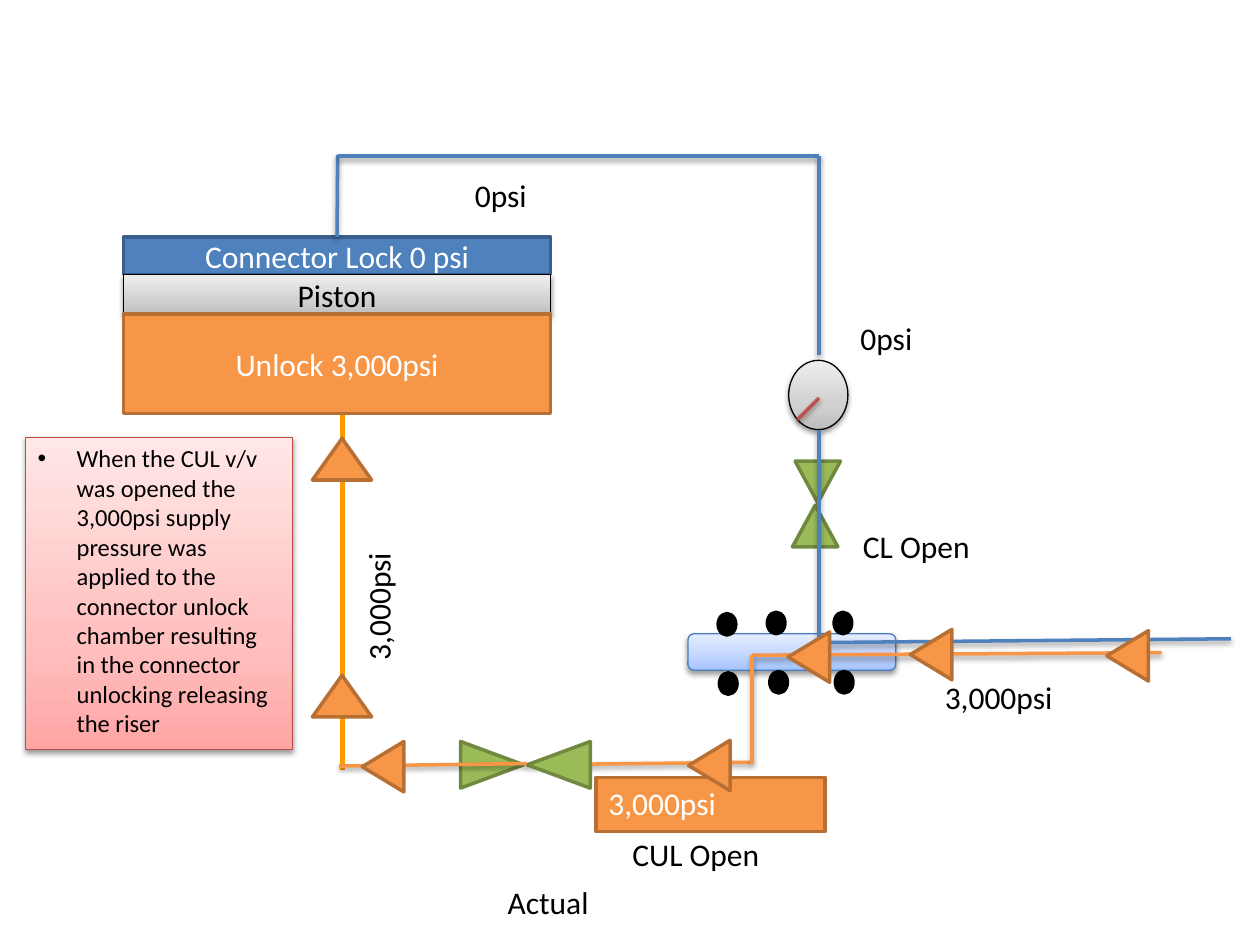
from copy import deepcopy
from pptx import Presentation, util as u
from pptx.dml.color import RGBColor
from pptx.enum import shapes, text
from pptx.oxml import ns, xmlchemy

PX = u.Inches(1) // 100
FONT = "Calibri"
BLACK, WHITE = RGBColor(0, 0, 0), RGBColor(255, 255, 255)
BLUE, BLUE_EDGE = RGBColor(0x4F, 0x81, 0xBD), RGBColor(0x3A, 0x5F, 0x8C)
ORANGE, ORANGE_EDGE = RGBColor(0xF7, 0x96, 0x46), RGBColor(0xB7, 0x6F, 0x34)
GREEN, GREEN_EDGE = RGBColor(0x9B, 0xBB, 0x59), RGBColor(0x71, 0x89, 0x3F)
AMBER, RED = RGBColor(0xFF, 0x99, 0), RGBColor(0xC0, 0x50, 0x4D)
SPOOL_EDGE, NOTE_EDGE = RGBColor(0x4B, 0x7E, 0xBC), RGBColor(0xBF, 0x4C, 0x48)
GREYS, SKIES, PINKS = (
    [RGBColor.from_string(c) for c in shades.split()]
    for shades in ("BDBDBD D1D1D1 EEEEEE", "A4C4FF BFD4FF E6EEFF", "FFA6A5 FFC0BF FFE7E7"))
GRADIENT_STOPS = (0, 0.35, 1)

KIND = shapes.MSO_SHAPE
LEFT, CENTER = text.PP_ALIGN.LEFT, text.PP_ALIGN.CENTER
TOP, MIDDLE = text.MSO_ANCHOR.TOP, text.MSO_ANCHOR.MIDDLE

CHAMBER_X, CHAMBER_W = 98, 339
CHAMBERS = [
    ("Connector Lock 0 psi", 188, 30, BLUE, BLUE_EDGE, 2, WHITE),
    ("Piston", 218, 32, GREYS, BLACK, 0.75, BLACK),
    ("Unlock 3,000psi", 249, 79, ORANGE, ORANGE_EDGE, 2, WHITE),
]
UNLOCK_RISER = (272, 328, 272, 611)
LOCK_RISER = (268, 188, 268, 123)
LOCK_PIPES = [(268, 124, 650, 124), (650, 124, 650, 282)]
GAUGE, NEEDLE = (626, 286, 47, 55), (650, 316, 633, 333)
UNLOCK_VALVE_PIPE = (418, 607, 596, 605)
VALVES = [
    ((629, 401, 36, 33), 0), ((631, 366, 36, 33), 180),
    ((372, 582, 37, 50), 90), ((425, 582, 37, 50), 270),
]
SPOOL = (546, 503, 165, 29)
ROLLERS = [(570, 487), (609, 486), (662, 486), (571, 534), (611, 533), (663, 533)]
SUPPLY_PIPES = [
    ((922, 518, 597, 520), ORANGE), ((977, 507, 649, 510), BLUE),
    ((597, 520, 597, 606), ORANGE), ((650, 341, 650, 509), BLUE),
    ((269, 608, 418, 606), ORANGE),
]
LABELS = [
    ("CUL Open", 492, 658, 182, LEFT, 0), ("CL Open", 675, 413, 182, LEFT, 0),
    ("0psi", 673, 248, 182, LEFT, 0), ("3,000psi", 740, 533, 182, LEFT, 0),
    ("Actual", 169, 696, 532, CENTER, 0), ("0psi", 367, 135, 182, LEFT, 0),
    ("3,000psi", 209, 423, 182, LEFT, 270),
]
UNLOCK_PRESSURE = ("3,000psi", (473, 617, 182, 43))
NOTE = ("When the CUL v/v was opened the 3,000psi supply pressure was applied to the "
        "connector unlock chamber resulting in the connector unlocking releasing the riser",
        (20, 347, 212, 248))
FLOW_LEFT = [(875, 504), (543, 591), (622, 505), (719, 503), (284, 592)]
FLOW_UP = [(248, 536), (248, 348)]

deck = Presentation()
deck.slide_width, deck.slide_height = 1000 * PX, 750 * PX
slide = deck.slides.add_slide(deck.slide_layouts[6])


def scaled(box):
    return [length * PX for length in box]


def cast_shadow(effects):
    shadow = xmlchemy.OxmlElement("a:outerShdw")
    for key, value in (("blurRad", u.Pt(3.1)), ("dist", u.Pt(1.6)),
                       ("dir", 5400000), ("rotWithShape", 0)):
        shadow.set(key, str(int(value)))
    tint = xmlchemy.OxmlElement("a:srgbClr")
    tint.set("val", str(BLACK))
    alpha = xmlchemy.OxmlElement("a:alpha")
    alpha.set("val", "38000")
    tint.append(alpha)
    shadow.append(tint)
    effects.append(shadow)


def add_part(kind, box, fill, edge, weight=2, turn=0):
    part = slide.shapes.add_shape(kind, *scaled(box))
    part.rotation = turn
    part.line.color.rgb, part.line.width = edge, u.Pt(weight)
    part.shadow.inherit = False
    if isinstance(fill, list):
        part.fill.gradient()
        part.fill.gradient_angle = 90
        stops = part.element.spPr.find(".//" + ns.qn("a:gsLst"))
        stops.insert(1, deepcopy(stops[0]))
        for stop, position, color in zip(part.fill.gradient_stops, GRADIENT_STOPS, fill):
            stop.position, stop.color.rgb = position, color
        cast_shadow(part.element.spPr.find(ns.qn("a:effectLst")))
    else:
        part.fill.solid()
        part.fill.fore_color.rgb = fill
    return part


def write(part, words, color, align=LEFT, anchor=TOP, size=18):
    frame = part.text_frame
    frame.text, frame.word_wrap, frame.vertical_anchor = words, True, anchor
    line = frame.paragraphs[0]
    line.alignment = align
    font = line.runs[0].font
    font.name, font.size, font.color.rgb = FONT, u.Pt(size), color
    return line


def add_pipe(ends, color, weight=2, shaded=True):
    pipe = slide.shapes.add_connector(shapes.MSO_CONNECTOR.STRAIGHT, *scaled(ends))
    pipe.line.color.rgb, pipe.line.width = color, u.Pt(weight)
    effects = xmlchemy.OxmlElement("a:effectLst")
    pipe.element.spPr.append(effects)
    if shaded:
        cast_shadow(effects)
    return pipe


add_pipe(UNLOCK_RISER, AMBER, 2.5, shaded=False)
chambers = []
for words, y, height, fill, edge, weight, color in CHAMBERS:
    chamber = add_part(KIND.RECTANGLE, (CHAMBER_X, y, CHAMBER_W, height), fill, edge, weight)
    write(chamber, words, color, CENTER, MIDDLE)
    chambers.append(chamber)

add_pipe(LOCK_RISER, BLUE).begin_connect(chambers[0], 0)
for ends in LOCK_PIPES:
    add_pipe(ends, BLUE)
add_part(KIND.OVAL, GAUGE, GREYS, BLACK, 0.75)
add_pipe(UNLOCK_VALVE_PIPE, ORANGE)
for box, turn in VALVES:
    add_part(KIND.ISOSCELES_TRIANGLE, box, GREEN, GREEN_EDGE, turn=turn)
add_pipe(NEEDLE, RED)

add_part(KIND.ROUNDED_RECTANGLE, SPOOL, SKIES, SPOOL_EDGE, 0.75)
for x, y in ROLLERS:
    add_part(KIND.OVAL, (x, y, 14, 17), BLACK, BLACK)
for ends, color in SUPPLY_PIPES:
    add_pipe(ends, color)

words, box = UNLOCK_PRESSURE
write(add_part(KIND.RECTANGLE, box, ORANGE, ORANGE_EDGE), words, WHITE)
for words, x, y, width, align, turn in LABELS:
    label = slide.shapes.add_textbox(*scaled((x, y, width, 40)))
    label.rotation = turn
    write(label, words, BLACK, align)

words, box = NOTE
finding = write(add_part(KIND.RECTANGLE, box, PINKS, NOTE_EDGE, 0.75), words, BLACK, size=14)
layout = finding._p.get_or_add_pPr()
layout.set("marL", str(31 * PX))
layout.set("indent", str(-31 * PX))
for tag, key, value in (("a:buFont", "typeface", "Arial"), ("a:buChar", "char", "•")):
    bullet = xmlchemy.OxmlElement(tag)
    bullet.set(key, value)
    layout.append(bullet)

for x, y in FLOW_LEFT:
    add_part(KIND.ISOSCELES_TRIANGLE, (x, y, 40, 33), ORANGE, ORANGE_EDGE, turn=270)
for x, y in FLOW_UP:
    add_part(KIND.ISOSCELES_TRIANGLE, (x, y, 47, 33), ORANGE, ORANGE_EDGE)

deck.save("out.pptx")
